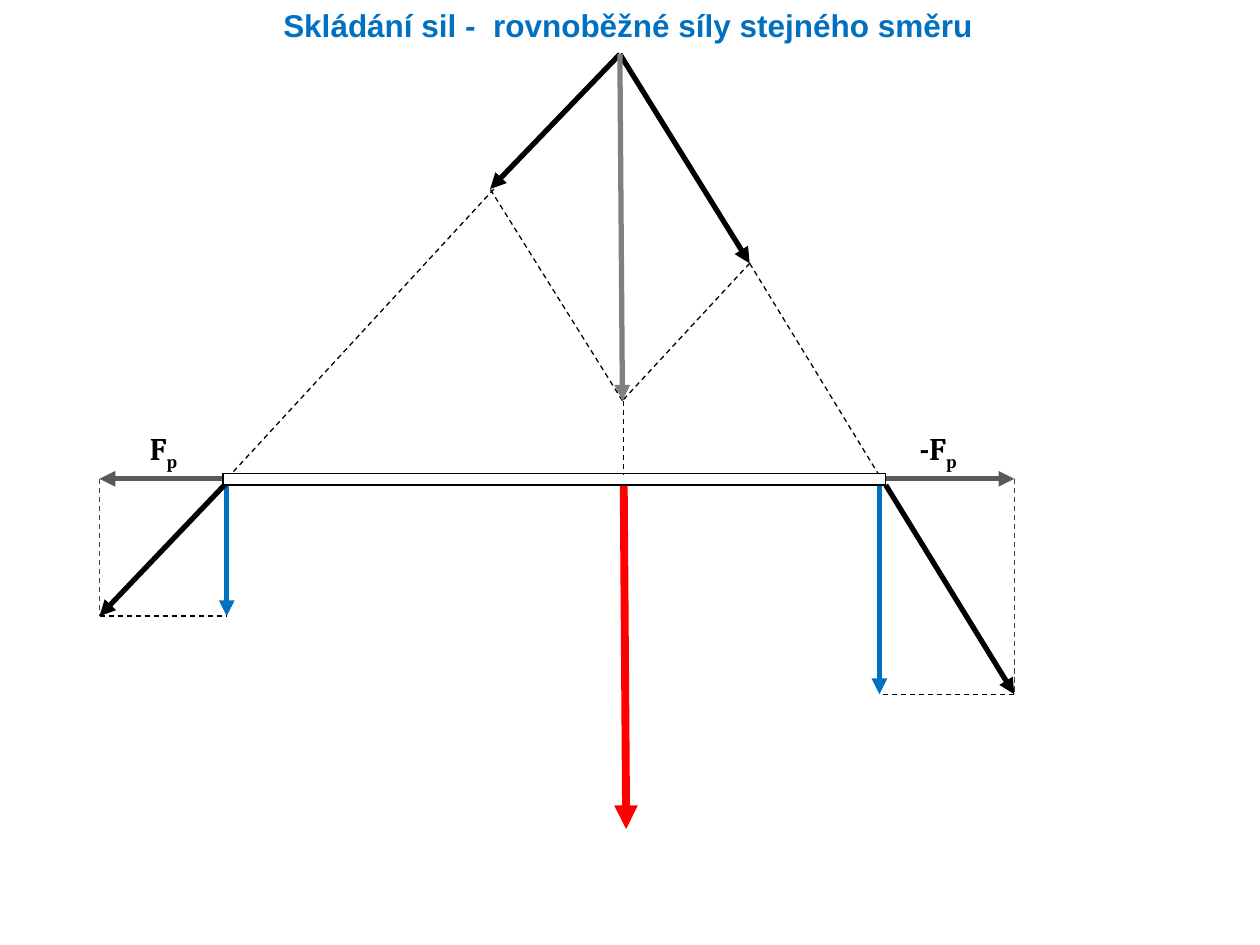
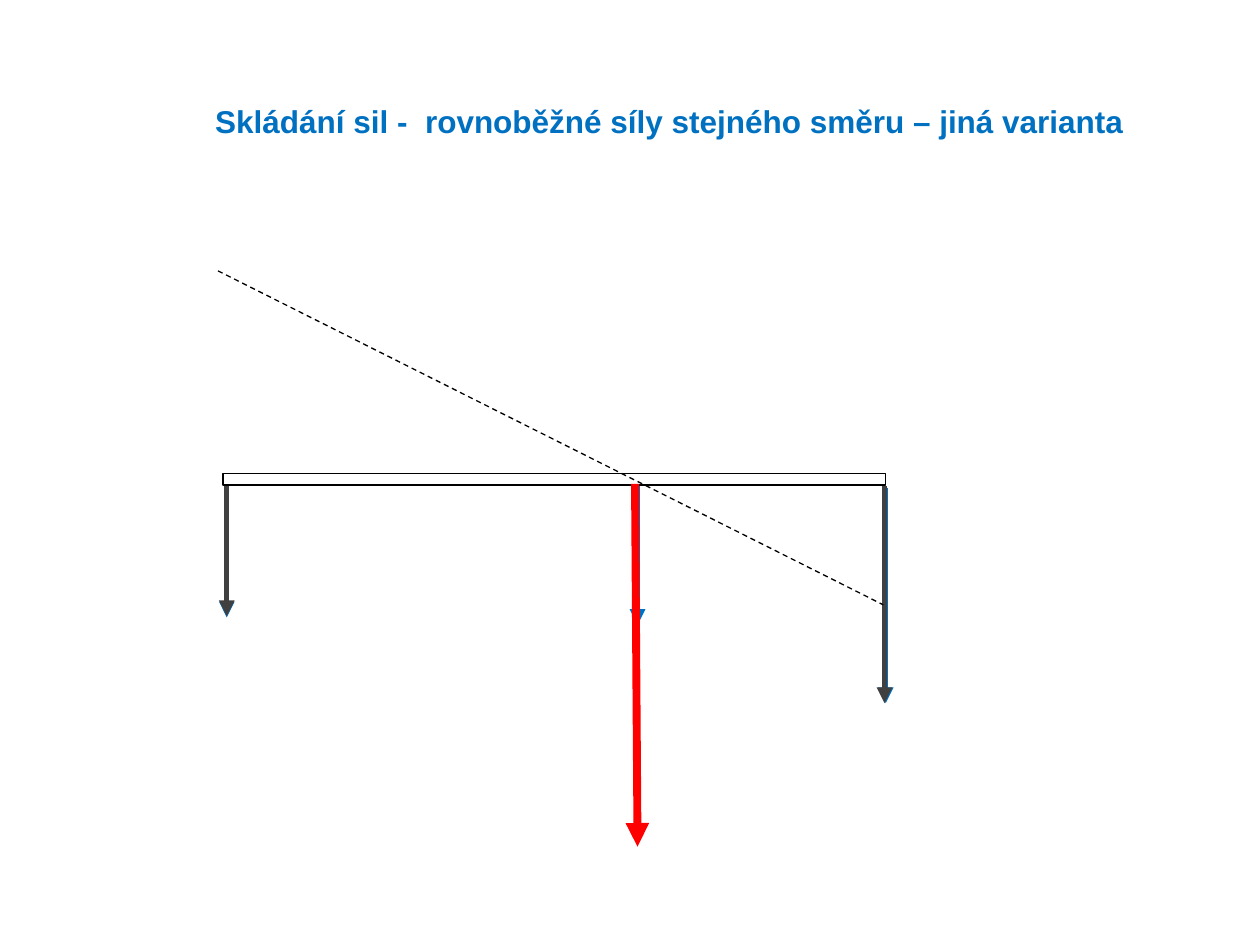
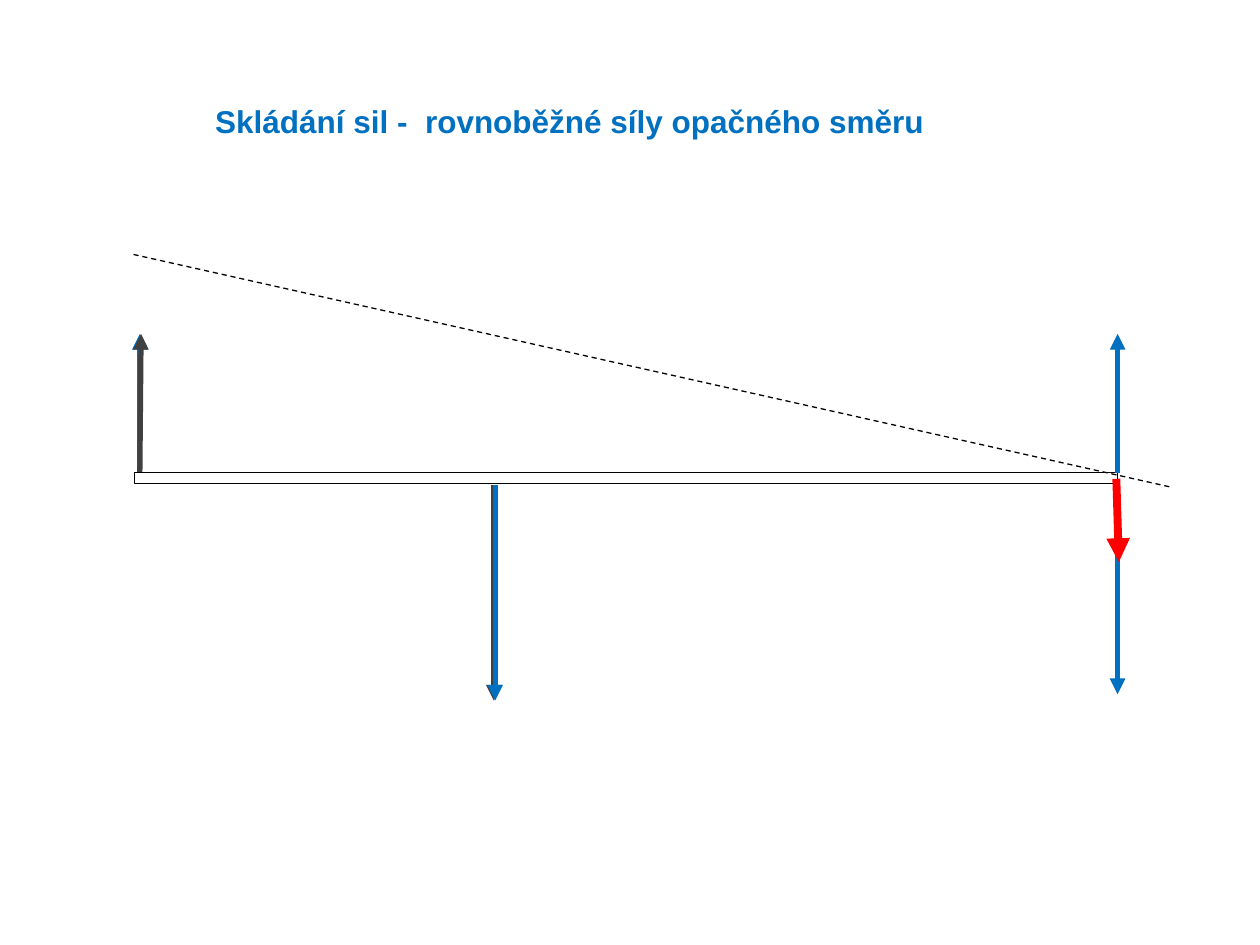
import lxml.etree
import pptx
import pptx.dml.color
import pptx.enum.dml
import pptx.enum.shapes
import pptx.oxml.ns
import pptx.util

Inches = pptx.util.Inches

COLORS = {
    "blue": "0070C0",
    "red": "FF0000",
    "black": "000000",
    "white": "FFFFFF",
    "charcoal": "404040",
    "slate": "595959",
    "gray": "808080",
}

LINE_STYLES = {
    "component": ("blue", 3, True),
    "resultant": ("red", 4.5, True),
    "slanted": ("black", 3, True),
    "auxiliary": ("slate", 3, True),
    "given": ("charcoal", 3, True),
    "shifted": ("gray", 3, True),
    "construction": ("black", 0.75, False),
    "projection": ("charcoal", 0.75, False),
}

BEAM_HEIGHT = 0.09
AXIS = 0.04


def rgb(name):
    return pptx.dml.color.RGBColor.from_string(COLORS[name])


def add_text(slide, box, text, font="Arial", color="blue", size=18, subscript=""):
    shape = slide.shapes.add_textbox(*map(Inches, box))
    shape.text_frame.word_wrap = True
    paragraph = shape.text_frame.paragraphs[0]
    for part in filter(None, (text, subscript)):
        run = paragraph.add_run()
        run.text = part
        run.font.name = font
        run.font.size = pptx.util.Pt(size)
        run.font.bold = True
        run.font.color.rgb = rgb(color)
    if subscript:
        run.font._element.set("baseline", "-25000")


def add_lines(slide, box, lines):
    left, top = box[:2]
    for style, start, end in lines:
        color, width, is_arrow = LINE_STYLES[style]
        connector = slide.shapes.add_connector(
            pptx.enum.shapes.MSO_CONNECTOR.STRAIGHT,
            Inches(left + start[0]), Inches(top + start[1]),
            Inches(left + end[0]), Inches(top + end[1]),
        )
        connector.line.color.rgb = rgb(color)
        connector.line.width = pptx.util.Pt(width)
        if is_arrow:
            outline = connector.line._get_or_add_ln()
            lxml.etree.SubElement(outline, pptx.oxml.ns.qn("a:tailEnd"), type="triangle")
        else:
            connector.line.dash_style = pptx.enum.dml.MSO_LINE.DASH
        properties = connector._element.spPr
        lxml.etree.SubElement(properties, pptx.oxml.ns.qn("a:effectLst"))


def add_beam(slide, box):
    shape = slide.shapes.add_shape(
        pptx.enum.shapes.MSO_SHAPE.RECTANGLE, *map(Inches, box))
    shape.shadow.inherit = False
    shape.fill.solid()
    shape.fill.fore_color.rgb = rgb("white")
    shape.line.color.rgb = rgb("black")
    shape.line.width = pptx.util.Pt(0.75)


def add_decomposition(slide, box, joint, tip, drop, slanted_start):
    bottom = AXIS + drop
    add_lines(slide, box, [
        ("component", (joint, AXIS), (joint, bottom)),
        ("auxiliary", (joint, AXIS), (tip, AXIS)),
        ("slanted", slanted_start, (tip, bottom)),
        ("projection", (tip, AXIS), (tip, bottom)),
        ("construction", (tip, bottom), (joint, bottom)),
    ])


def add_force_polygon(slide, box):
    pole = (3.15, -3.33)
    left_tip = (2.12, -2.26)
    right_tip = (4.18, -1.67)
    meeting = (3.17, -0.58)
    add_lines(slide, box, [
        ("slanted", pole, left_tip),
        ("slanted", pole, right_tip),
        ("construction", meeting, left_tip),
        ("construction", right_tip, meeting),
        ("construction", right_tip, (5.2, 0)),
        ("construction", (3.18, -0.72), (3.18, 0.01)),
        ("shifted", pole, meeting),
    ])


def build_parallelogram_slide(slide, box):
    left, top, width, height = box
    add_text(slide, (2.15, 0, 6.24, 0.4), "Skládání sil -  rovnoběžné síly stejného směru")
    add_lines(slide, box, [
        ("construction", (2.15, -2.26), (0.03, AXIS)),
        ("resultant", (3.18, 0.06), (3.2, 2.82)),
    ])
    add_decomposition(slide, box, 0.03, -0.98, 1.09, (AXIS, 0.06))
    add_decomposition(slide, box, 5.21, 6.28, 1.71, (width, height))
    add_beam(slide, box)
    add_force_polygon(slide, box)
    label = {"font": "Cambria", "color": "black", "subscript": "p"}
    add_text(slide, (left + 5.43, top - 0.4, 1.45, 1), "-F", **label)
    add_text(slide, (left - 0.68, top - 0.4, 2.12, 1.36), "F", **label)


def build_exchange_slide(slide, box, title, lines_behind, lines_in_front):
    add_text(slide, (1.61, 0.76, 7.87, 0.4), title)
    add_lines(slide, box, lines_behind)
    add_beam(slide, box)
    add_lines(slide, box, lines_in_front)


def main():
    presentation = pptx.Presentation()
    presentation.slide_width = Inches(10)
    presentation.slide_height = Inches(7.5)
    blank = presentation.slide_layouts[6]
    short_beam = (1.77, 3.76, 5.26, BEAM_HEIGHT)
    long_beam = (1.07, 3.75, 7.8, BEAM_HEIGHT)

    build_parallelogram_slide(presentation.slides.add_slide(blank), short_beam)
    build_exchange_slide(
        presentation.slides.add_slide(blank), short_beam,
        "Skládání sil -  rovnoběžné síly stejného směru – jiná varianta",
        [
            ("component", (5.26, 0.11), (5.26, 1.82)),
            ("component", (0.03, AXIS), (0.03, 1.14)),
            ("given", (5.25, 0.1), (5.25, 1.82)),
            ("given", (0.03, 0.02), (0.03, 1.13)),
        ],
        [
            ("construction", (-0.04, -1.61), (5.24, 1.04)),
            ("component", (3.29, 0.1), (3.29, 1.2)),
            ("resultant", (3.27, 0.08), (3.29, 2.96)),
        ],
    )
    build_exchange_slide(
        presentation.slides.add_slide(blank), long_beam,
        "Skládání sil -  rovnoběžné síly opačného směru",
        [
            ("given", (2.85, 0.1), (2.85, 1.81)),
            ("component", (2.86, 0.1), (2.86, 1.81)),
            ("component", (0.04, 0), (0.04, -1.1)),
            ("given", (0.04, 0), (0.05, -1.1)),
        ],
        [
            ("construction", (-0.01, -1.73), (8.24, 0.12)),
            ("component", (7.8, 0), (7.8, -1.1)),
            ("component", (7.8, 0.05), (7.8, 1.76)),
            ("resultant", (7.79, 0.05), (7.81, 0.71)),
        ],
    )
    presentation.save("out.pptx")


if __name__ == "__main__":
    main()
